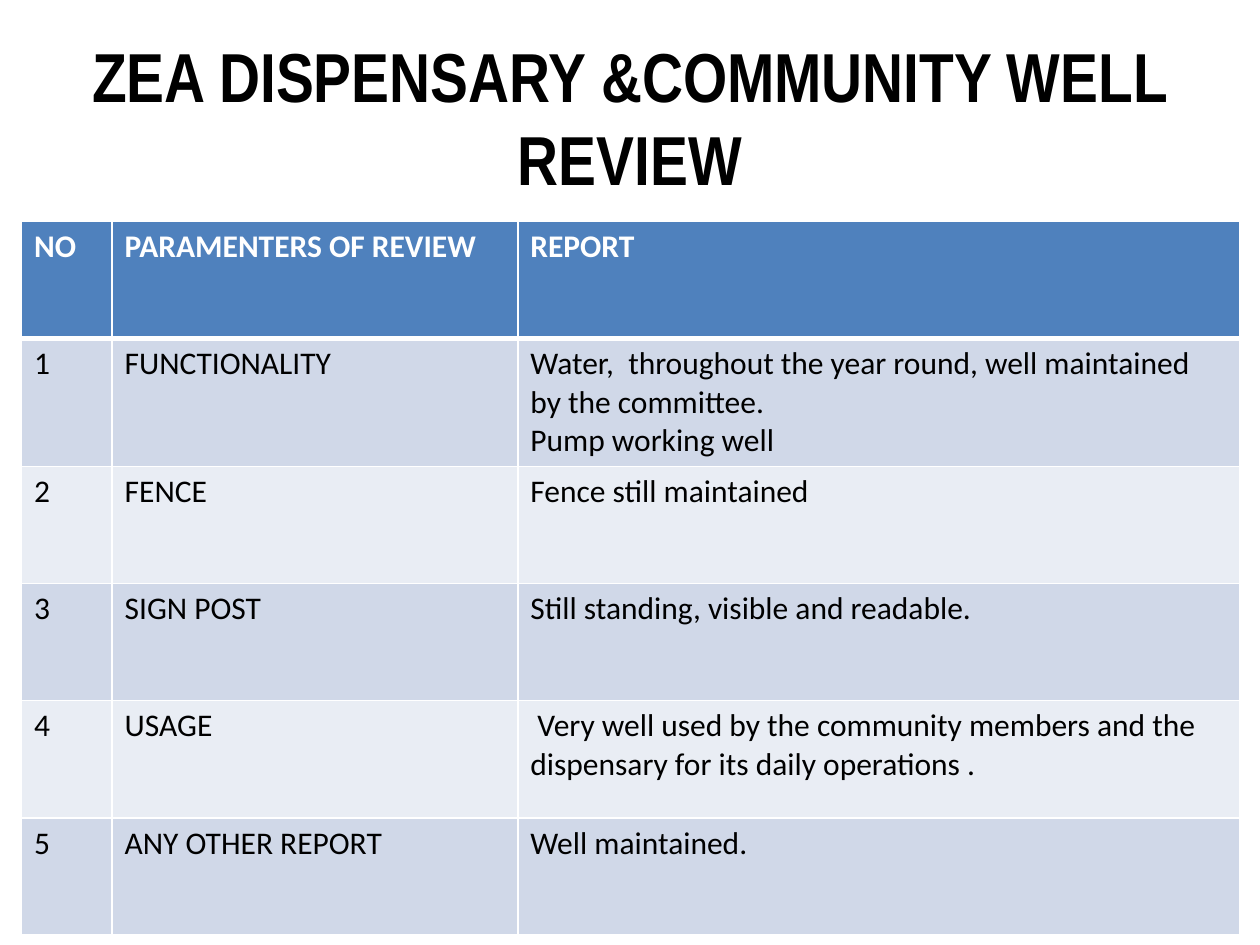
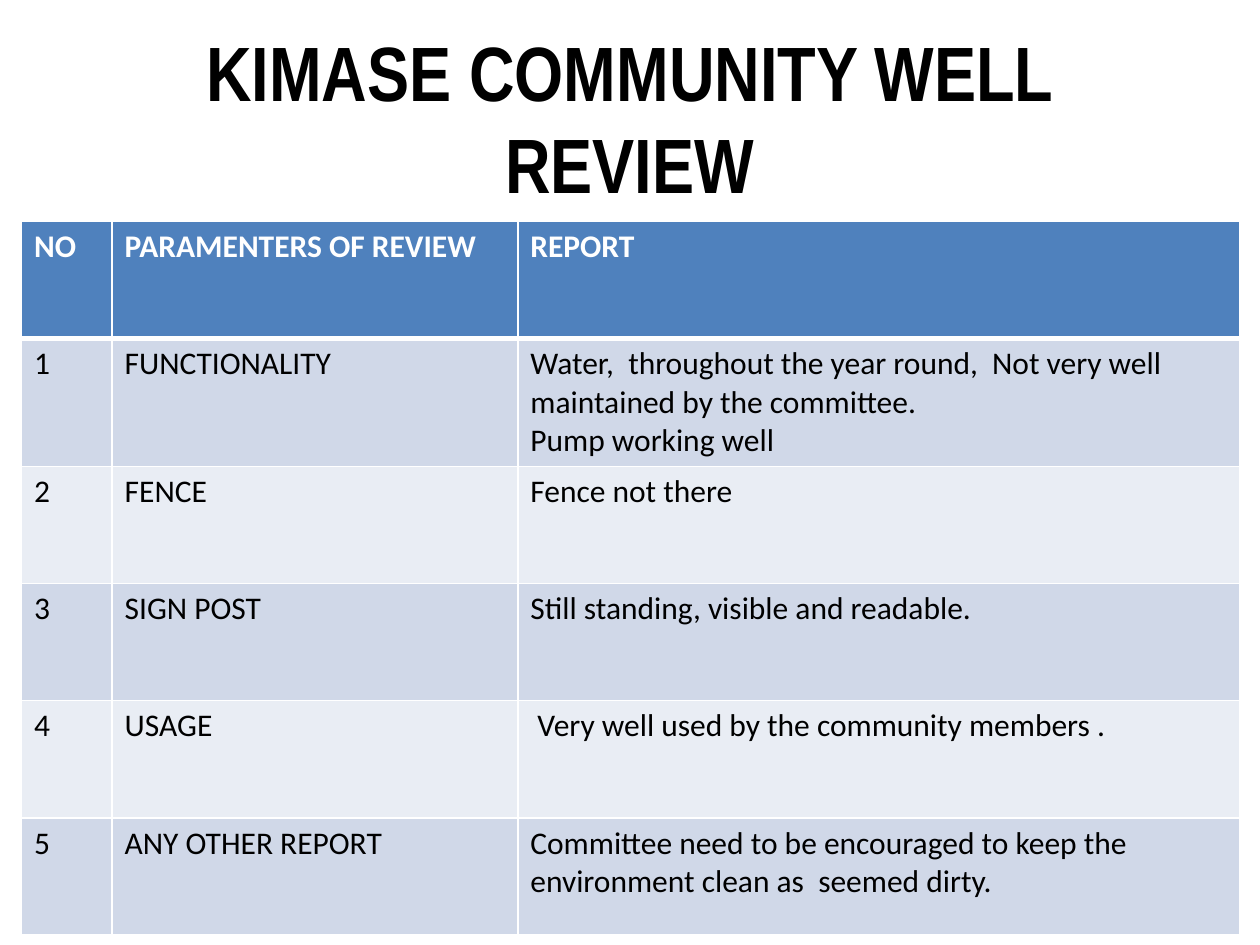
from pptx import Presentation
from pptx import util as u
from pptx.dml.color import RGBColor
from pptx.enum import text
from pptx.oxml import parse_xml
from pptx.oxml.ns import nsdecls

BLACK = RGBColor(0x00, 0x00, 0x00)
WHITE = RGBColor(0xFF, 0xFF, 0xFF)
HEADER_BLUE = RGBColor(0x4F, 0x81, 0xBD)
BAND_DARK = RGBColor(0xD0, 0xD8, 0xE8)
BAND_LIGHT = RGBColor(0xE9, 0xED, 0xF4)

TITLE_ONLY = 5
HEADINGS = ["NO", "PARAMENTERS OF REVIEW", "REPORT"]
PARAMETERS = ["FUNCTIONALITY", "FENCE", "SIGN POST", "USAGE", "ANY OTHER REPORT"]
COLUMN_WIDTHS = [0.72, 3.22, 5.73]
ROW_HEIGHT = 0.93

REVIEWS = [
    ("ZEA DISPENSARY &COMMUNITY WELL REVIEW", 39.6, [
        "Water,  throughout the year round, well maintained by the committee.\n"
        "Pump working well",
        "Fence still maintained",
        "Still standing, visible and readable.",
        " Very well used by the community members and the dispensary "
        "for its daily operations .",
        "Well maintained.",
    ]),
    ("KIMASE COMMUNITY WELL REVIEW", 44, [
        "Water,  throughout the year round,  Not very well maintained "
        "by the committee.\nPump working well",
        "Fence not there",
        "Still standing, visible and readable.",
        " Very well used by the community members .",
        "Committee need to be encouraged to keep the environment clean "
        "as  seemed dirty.",
    ]),
]


class ReviewDeck:
    title_font = "Arial Narrow"
    body_font = "Calibri"
    body_size = 18

    def __init__(self):
        self.deck = Presentation()
        self.deck.slide_width = u.Inches(10)
        self.deck.slide_height = u.Inches(7.5)
        self.slide = None

    def box(self, left, top, width, height):
        """Turn shares of the slide's size into lengths."""
        across, down = self.deck.slide_width, self.deck.slide_height
        return (int(left * across), int(top * down),
                int(width * across), int(height * down))

    def add_slide(self):
        layout = self.deck.slide_layouts[TITLE_ONLY]
        self.slide = self.deck.slides.add_slide(layout)

    def style(self, paragraph, font_name, size, color, bold):
        for run in paragraph.runs:
            run.font.name = font_name
            run.font.size = u.Pt(size)
            run.font.bold = bold
            run.font.color.rgb = color

    def add_title(self, wording, size):
        title = self.slide.shapes.title
        title.left, title.top, title.width, title.height = self.box(0.05, 0.04, 0.9, 1 / 6)
        frame = title.text_frame
        frame.text = wording
        frame.auto_size = text.MSO_AUTO_SIZE.NONE
        frame.vertical_anchor = text.MSO_ANCHOR.MIDDLE
        heading = frame.paragraphs[0]
        heading.alignment = text.PP_ALIGN.CENTER
        self.style(heading, self.title_font, size, BLACK, True)

    def add_borders(self, cell, widths):
        """Draw white cell borders; widths maps a side (L, R, T, B) to points."""
        properties = cell._tc.get_or_add_tcPr()
        for side, width in widths.items():
            properties.append(parse_xml(
                f'<a:ln{side} {nsdecls("a")} w="{u.Pt(width)}"><a:solidFill>'
                f'<a:srgbClr val="{WHITE}"/></a:solidFill></a:ln{side}>'))

    def fill_cell(self, cell, wording, row):
        header = row == 0
        self.add_borders(cell, {"L": 1, "R": 1, "T": 3 if row == 1 else 1,
                                "B": 3 if header else 1})
        cell.fill.solid()
        cell.fill.fore_color.rgb = (
            HEADER_BLUE if header else BAND_DARK if row % 2 else BAND_LIGHT)
        cell.text_frame.text = wording
        for paragraph in cell.text_frame.paragraphs:
            self.style(paragraph, self.body_font, self.body_size,
                       WHITE if header else BLACK, header)

    def add_table(self, rows):
        left, top, width, _ = self.box(0.017, 0.234, 0.967, 0)
        row_height = u.Inches(ROW_HEIGHT)
        table = self.slide.shapes.add_table(
            len(rows), len(COLUMN_WIDTHS), left, top, width, row_height * len(rows)).table
        for column, inches in zip(table.columns, COLUMN_WIDTHS):
            column.width = u.Inches(inches)
        for row, wordings in enumerate(rows):
            table.rows[row].height = row_height
            for column, wording in enumerate(wordings):
                self.fill_cell(table.cell(row, column), wording, row)


def main():
    review_deck = ReviewDeck()
    for title, title_size, reports in REVIEWS:
        review_deck.add_slide()
        review_deck.add_title(title, title_size)
        findings = [[str(number), parameter, report] for number, (parameter, report)
                    in enumerate(zip(PARAMETERS, reports), start=1)]
        review_deck.add_table([HEADINGS] + findings)
    review_deck.deck.save("out.pptx")


if __name__ == "__main__":
    main()
